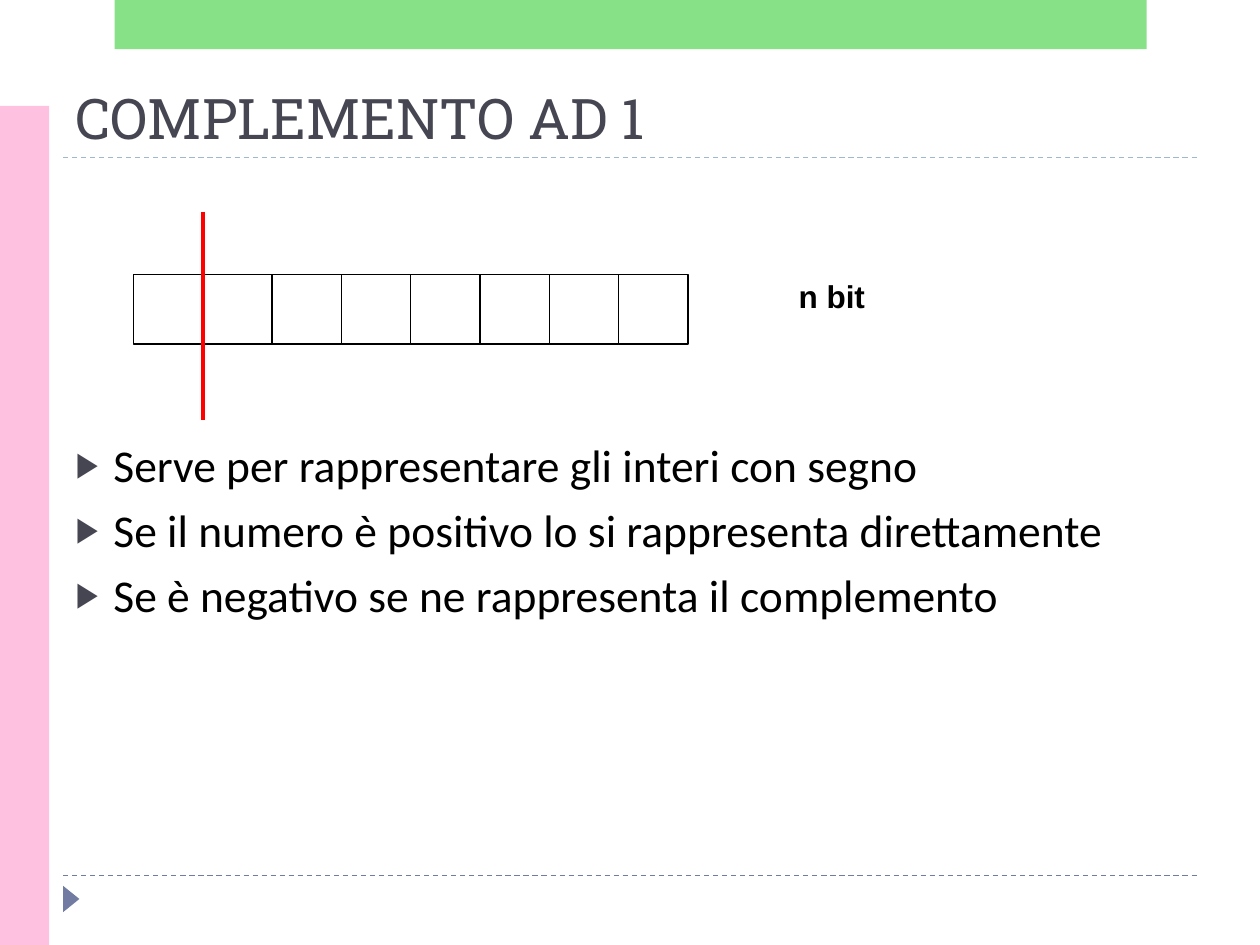
from lxml import etree
from pptx import Presentation
from pptx.dml.color import RGBColor
from pptx.enum.dml import MSO_LINE
from pptx.enum.shapes import MSO_CONNECTOR, MSO_SHAPE
from pptx.enum.text import MSO_ANCHOR, MSO_AUTO_SIZE, PP_ALIGN
from pptx.oxml.ns import qn
from pptx.util import Inches, Pt

STRAIGHT = MSO_CONNECTOR.STRAIGHT
RECTANGLE = MSO_SHAPE.RECTANGLE
TRIANGLE = MSO_SHAPE.ISOSCELES_TRIANGLE
DASH = MSO_LINE.DASH
LEFT = PP_ALIGN.LEFT
TOP, BOTTOM = MSO_ANCHOR.TOP, MSO_ANCHOR.BOTTOM
NO_AUTOSIZE = MSO_AUTO_SIZE.NONE


def color(value):
    return RGBColor.from_string(value)


def add_line(x1, y1, x2, y2, line_color, width):
    line = slide.shapes.add_connector(
        STRAIGHT, Inches(x1), Inches(y1), Inches(x2), Inches(y2))
    line.line.color.rgb = color(line_color)
    line.line.width = Pt(width)
    etree.SubElement(line._element.spPr, qn("a:effectLst"))
    return line


presentation = Presentation()
presentation.slide_width = Inches(10)
presentation.slide_height = Inches(7.5)
slide = presentation.slides.add_slide(presentation.slide_layouts[1])

# Dashed rules above the footer and below the title
for y, rule_color in [(6.95, "727CA3"), (1.25, "9FB8CD")]:
    add_line(0.5, y, 9.5, y, rule_color, 0.75).line.dash_style = DASH

# Footer marker, side band and top band
decorations = [
    (TRIANGLE, 0.46, 7.07, 0.21, 0.13, 90, "727CA3"),
    (RECTANGLE, 0, 0.84, 0.39, 6.66, 0, "FFC1E0"),
    (RECTANGLE, 0.91, 0, 8.19, 0.39, 0, "62D862"),
]
for preset, left, top, width, height, rotation, fill in decorations:
    band = slide.shapes.add_shape(
        preset, Inches(left), Inches(top), Inches(width), Inches(height))
    band.rotation = rotation
    band.shadow.inherit = False
    band.fill.solid()
    band.fill.fore_color.rgb = color(fill)
    band.line.fill.background()

# The top band, added last, is slightly transparent
top_fill = band._element.spPr.find(qn("a:solidFill"))
etree.SubElement(top_fill[0], qn("a:alpha"), val="76000")

# Title
title = slide.shapes.title
title.left, title.top = Inches(0.5), Inches(0.55)
title.width, title.height = Inches(9), Inches(0.7)
title.text_frame.text = "COMPLEMENTO AD 1"
title.text_frame.vertical_anchor = BOTTOM
title.text_frame.auto_size = NO_AUTOSIZE
paragraph = title.text_frame.paragraphs[0]
paragraph.alignment = LEFT
paragraph.font.size = Pt(32)
paragraph.font.name = "Roboto Slab"
paragraph.font.color.rgb = color("464653")

# Bulleted list
body = slide.placeholders[1]
body.left, body.top = Inches(0.5), Inches(3.42)
body.width, body.height = Inches(9), Inches(3.31)
body.text_frame.text = "\n".join([
    "Serve per rappresentare gli interi con segno",
    "Se il numero è positivo lo si rappresenta direttamente",
    "Se è negativo se ne rappresenta il complemento",
])
body.text_frame.vertical_anchor = TOP
body.text_frame.auto_size = NO_AUTOSIZE
for index, paragraph in enumerate(body.text_frame.paragraphs):
    paragraph.space_before = Pt(6 if index else 0)
    properties = paragraph._element.get_or_add_pPr()
    properties.set("marL", str(Inches(0.3)))
    properties.set("indent", str(Inches(-0.3)))
    bullet_color = etree.SubElement(properties, qn("a:buClr"))
    etree.SubElement(bullet_color, qn("a:srgbClr"), val="464653")
    etree.SubElement(properties, qn("a:buSzPct"), val="76000")
    etree.SubElement(properties, qn("a:buChar"), char="▶")
    paragraph.font.size = Pt(26)
    paragraph.font.name = "Calibri"
    paragraph.font.color.rgb = color("000000")

# Label beside the register
label = slide.shapes.add_textbox(
    Inches(6.24), Inches(2.15), Inches(0.97), Inches(0.5))
label.text_frame.word_wrap = False
label.text_frame.text = "n bit"
paragraph = label.text_frame.paragraphs[0]
paragraph.font.size = Pt(18)
paragraph.font.name = "Arial"
paragraph.font.bold = True
paragraph.font.color.rgb = color("000000")

# Register of eight bits
bit_size = Inches(0.55)
for bit in range(8):
    cell = slide.shapes.add_shape(
        RECTANGLE, Inches(1.06) + bit * bit_size, Inches(2.18),
        bit_size, bit_size)
    cell.shadow.inherit = False
    cell.fill.solid()
    cell.fill.fore_color.rgb = color("FFFFFF")
    cell.line.color.rgb = color("000000")
    cell.line.width = Pt(0.75)

# Divider after the sign bit
add_line(1.61, 1.68, 1.61, 3.33, "FF0000", 2)

presentation.save("out.pptx")
